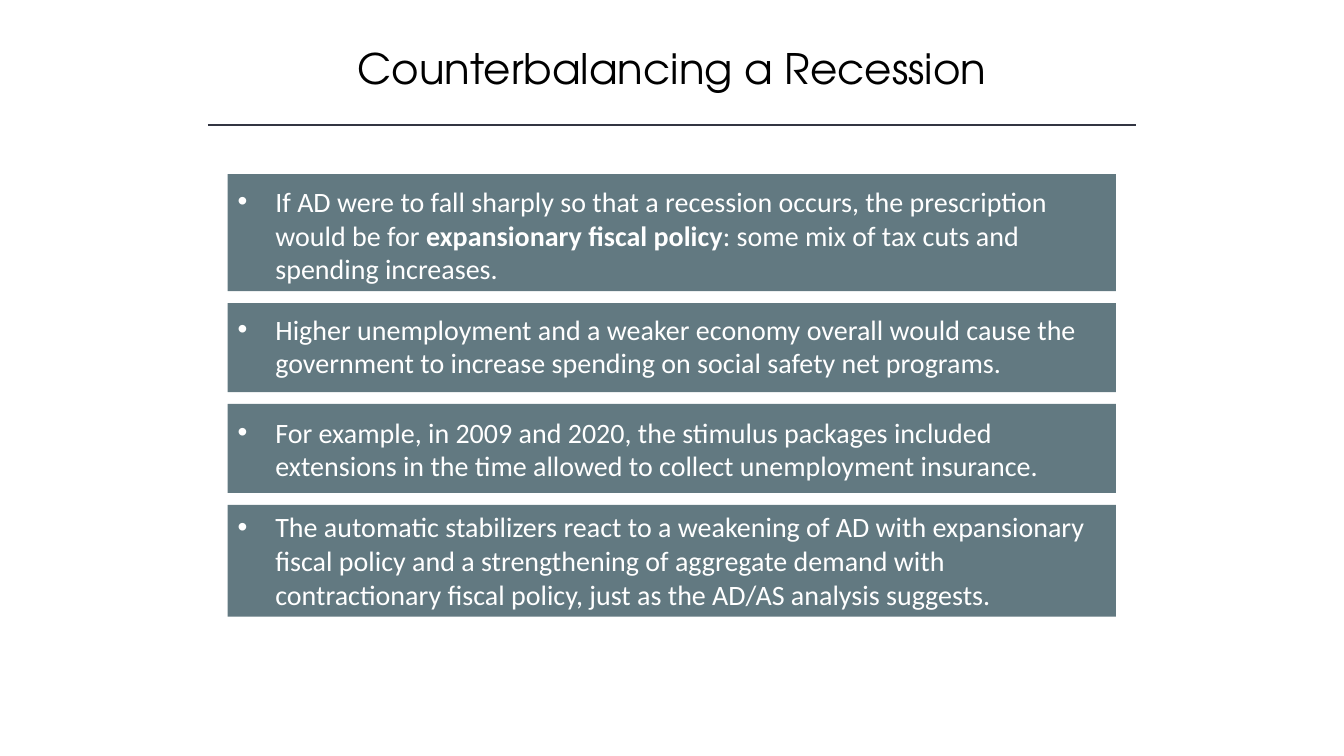
"""Build the slide on counterbalancing a recession."""
from lxml.etree import SubElement
from pptx import Presentation
from pptx.dml.color import RGBColor
from pptx.enum.shapes import MSO_CONNECTOR, MSO_SHAPE
from pptx.enum.text import MSO_ANCHOR, PP_ALIGN
from pptx.oxml.ns import qn
from pptx.util import Cm, Pt

HUES = {"title": "000000", "rule": "323542", "card": "627981", "text": "FFFFFF"}
GAP = 0.3
CARDS = [
    (2.95, 0.13, [
        "If AD were to fall sharply so that a recession occurs, the prescription would be for ",
        "expansionary fiscal policy",
        ": some mix of tax cuts and spending increases."]),
    (2.24, 0.1, [
        "Higher unemployment and a weaker economy overall would cause the government "
        "to increase spending on social safety net programs."]),
    (2.24, 0.15, [
        "For example, in 2009 and 2020, the stimulus packages included extensions "
        "in the time allowed to collect unemployment insurance."]),
    (2.82, 0, [
        "The automatic stabilizers react to a weakening of AD with expansionary fiscal policy "
        "and a strengthening of aggregate demand with contractionary fiscal policy, "
        "just as the AD/AS analysis suggests."]),
]


def hue(name):
    return RGBColor.from_string(HUES[name])


def style(para, face, size, name):
    para.font.name = face
    para.font.size = Pt(size)
    para.font.color.rgb = hue(name)


def bullet(para):
    props = para._p.get_or_add_pPr()
    props.set("marL", str(Cm(0.95)))
    props.set("indent", str(-Cm(0.95)))
    SubElement(props, qn("a:buFont")).set("typeface", "Arial")
    SubElement(props, qn("a:buChar")).set("char", "•")


def header(slide, left, top, width, height):
    box = slide.shapes.add_textbox(Cm(left), Cm(top), Cm(width), Cm(1.55))
    frame = box.text_frame
    frame.word_wrap = True
    frame.vertical_anchor = MSO_ANCHOR.MIDDLE
    para = frame.paragraphs[0]
    para.text = "Counterbalancing a Recession"
    para.alignment = PP_ALIGN.CENTER
    style(para, "TeX Gyre Adventor", 30, "title")

    base = Cm(top + height)
    rule = slide.shapes.add_connector(
        MSO_CONNECTOR.STRAIGHT, Cm(left + 1), base, Cm(left + width - 1), base)
    rule.line.color.rgb = hue("rule")
    rule.line.width = Pt(1)
    SubElement(rule._element.spPr, qn("a:effectLst"))


def card(slide, left, top, width, height, drop, parts):
    box = slide.shapes.add_shape(
        MSO_SHAPE.RECTANGLE, Cm(left), Cm(top), Cm(width), Cm(height))
    box.shadow.inherit = False
    box.fill.solid()
    box.fill.fore_color.rgb = hue("card")
    box.line.fill.background()
    frame = box.text_frame
    frame.word_wrap = True
    frame.vertical_anchor = MSO_ANCHOR.TOP
    frame.margin_top = Cm(0.13 + drop)
    frame.margin_bottom = 0
    para = frame.paragraphs[0]
    para.alignment = PP_ALIGN.LEFT
    bullet(para)
    style(para, "Calibri", 20, "text")
    for spot, words in enumerate(parts):
        run = para.add_run()
        run.text = words
        if spot == 1:
            run.font.bold = True


def stack(slide, left, top, width):
    for height, drop, parts in CARDS:
        card(slide, left, top, width, height, drop, parts)
        top += height + GAP


def main():
    deck = Presentation()
    deck.slide_width, deck.slide_height = Cm(33.87), Cm(19.05)
    slide = deck.slides.add_slide(deck.slide_layouts[6])
    header(slide, 4.24, 0.94, 25.4, 2.21)
    stack(slide, 5.74, 4.39, 22.38)
    deck.save("out.pptx")


if __name__ == "__main__":
    main()
